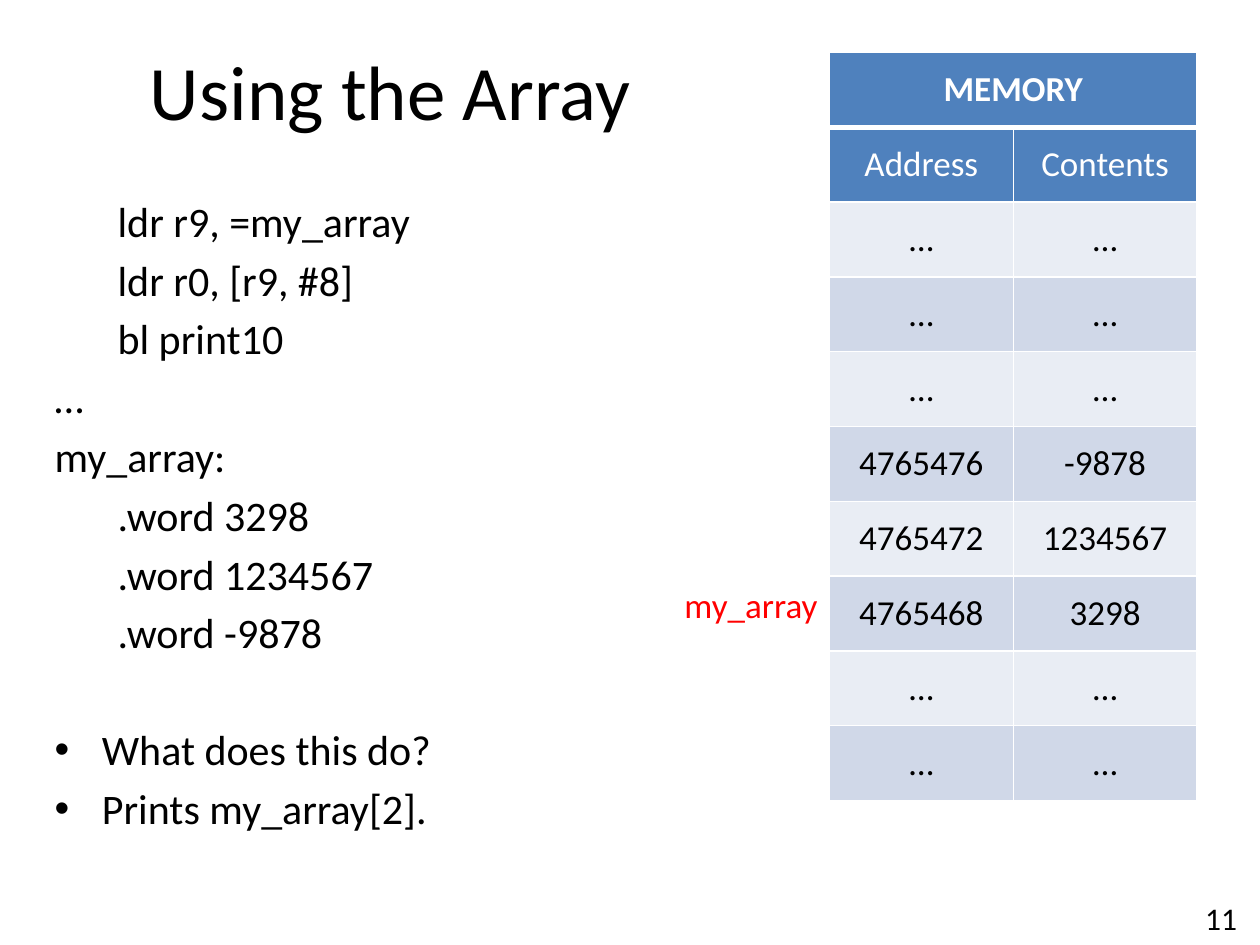
from dataclasses import dataclass
from typing import Optional

import pptx
import pptx.dml.color
import pptx.enum.text
import pptx.oxml
import pptx.oxml.ns
import pptx.util

Pt = pptx.util.Pt
Align = pptx.enum.text.PP_ALIGN
Anchor = pptx.enum.text.MSO_ANCHOR

FONT = "Calibri"
BLACK, WHITE, RED = "000000", "FFFFFF", "FF0000"
HEADER, LIGHT_BAND, DARK_BAND = "4F81BD", "E9EDF4", "D0D8E8"


@dataclass
class Box:
    left: float
    top: float
    width: float
    height: float


@dataclass
class Line:
    text: str
    bulleted: bool = False
    space_before: Optional[float] = None


@dataclass
class Label:
    text: str
    box: Box
    size: float
    color: str
    align: Align
    wrap: bool


LINES = [
    Line("\tldr r9, =my_array"),
    Line("\tldr r0, [r9, #8]"),
    Line("\tbl print10"),
    Line("…"),
    Line("my_array:"),
    Line("\t.word 3298"),
    Line("\t.word 1234567"),
    Line("\t.word -9878"),
    Line("What does this do?", True, 38),
    Line("Prints my_array[2].", True),
]

LABELS = [
    Label("11", Box(546, 510, 168, 28.8), 18, BLACK, Align.RIGHT, True),
    Label("my_array", Box(384, 330, 91.2, 31.5), 20, RED, Align.LEFT, False),
]

MEMORY = [
    ("MEMORY", ""),
    ("Address", "Contents"),
    *[("…", "…")] * 3,
    ("4765476", "-9878"),
    ("4765472", "1234567"),
    ("4765468", "3298"),
    *[("…", "…")] * 2,
]


def rgb(color: str) -> pptx.dml.color.RGBColor:
    return pptx.dml.color.RGBColor.from_string(color)


def place(shape, box: Box) -> None:
    shape.left, shape.top = Pt(box.left), Pt(box.top)
    shape.width, shape.height = Pt(box.width), Pt(box.height)


def format_runs(paragraph, size: float, color: str, bold: Optional[bool] = None) -> None:
    for run in paragraph.runs:
        run.font.name = FONT
        run.font.size = Pt(size)
        run.font.bold = bold
        run.font.color.rgb = rgb(color)


def fill_title(shape, text: str) -> None:
    place(shape, Box(36, 6, 384, 90))
    shape.text_frame.text = text
    shape.text_frame.vertical_anchor = Anchor.MIDDLE
    paragraph = shape.text_frame.paragraphs[0]
    paragraph.alignment = Align.CENTER
    format_runs(paragraph, 44, BLACK)


def fill_body(shape, lines: list[Line]) -> None:
    place(shape, Box(24, 108, 432, 396))
    frame = shape.text_frame
    frame.text = "\n".join(line.text for line in lines)
    frame.auto_size = pptx.enum.text.MSO_AUTO_SIZE.NONE
    for paragraph, line in zip(frame.paragraphs, lines):
        format_runs(paragraph, 24, BLACK)
        if line.space_before is not None:
            paragraph.space_before = Pt(line.space_before)
        if not line.bulleted:
            properties = paragraph._p.get_or_add_pPr()
            properties.set("marL", "0")
            properties.set("indent", "0")
            properties.append(pptx.oxml.parse_xml(
                f'<a:buNone {pptx.oxml.ns.nsdecls("a")}/>'))


def add_label(slide, label: Label) -> None:
    box = label.box
    shape = slide.shapes.add_textbox(
        Pt(box.left), Pt(box.top), Pt(box.width), Pt(box.height))
    shape.text_frame.text = label.text
    shape.text_frame.word_wrap = label.wrap
    paragraph = shape.text_frame.paragraphs[0]
    paragraph.alignment = label.align
    format_runs(paragraph, label.size, label.color)


def set_borders(cell, widths: dict[str, float]) -> None:
    properties = cell._tc.get_or_add_tcPr()
    for position, (side, width) in enumerate(widths.items()):
        properties.insert(position, pptx.oxml.parse_xml(
            f'<a:ln{side} {pptx.oxml.ns.nsdecls("a")} w="{Pt(width)}">'
            f'<a:solidFill><a:srgbClr val="{WHITE}"/></a:solidFill></a:ln{side}>'))


def add_memory_table(slide, rows: list[tuple[str, str]], box: Box) -> None:
    table = slide.shapes.add_table(
        len(rows), 2, Pt(box.left), Pt(box.top), Pt(box.width), Pt(box.height)).table
    for column in table.columns:
        column.width = Pt(box.width / 2)
    for row_index, texts in enumerate(rows):
        table.rows[row_index].height = Pt(box.height / len(rows))
        is_header = row_index < 2
        band = HEADER if is_header else (LIGHT_BAND, DARK_BAND)[row_index % 2]
        for column_index, text in enumerate(texts):
            cell = table.cell(row_index, column_index)
            cell.text = text
            cell.vertical_anchor = Anchor.MIDDLE
            cell.fill.solid()
            cell.fill.fore_color.rgb = rgb(band)
            set_borders(cell, {
                "L": 1, "R": 1,
                "T": 3 if row_index == 1 else 1,
                "B": 3 if row_index == 0 else 1,
            })
            paragraph = cell.text_frame.paragraphs[0]
            paragraph.alignment = Align.CENTER
            format_runs(paragraph, 20, WHITE if is_header else BLACK, row_index == 0)
    table.cell(0, 0).merge(table.cell(0, 1))


def main() -> None:
    presentation = pptx.Presentation()
    presentation.slide_width, presentation.slide_height = Pt(720), Pt(540)
    slide = presentation.slides.add_slide(presentation.slide_layouts[1])
    fill_title(slide.shapes.title, "Using the Array ")
    fill_body(slide.placeholders[1], LINES)
    add_memory_table(slide, MEMORY, Box(474, 30, 210, 427.5))
    for label in LABELS:
        add_label(slide, label)
    presentation.save("out.pptx")


if __name__ == "__main__":
    main()
